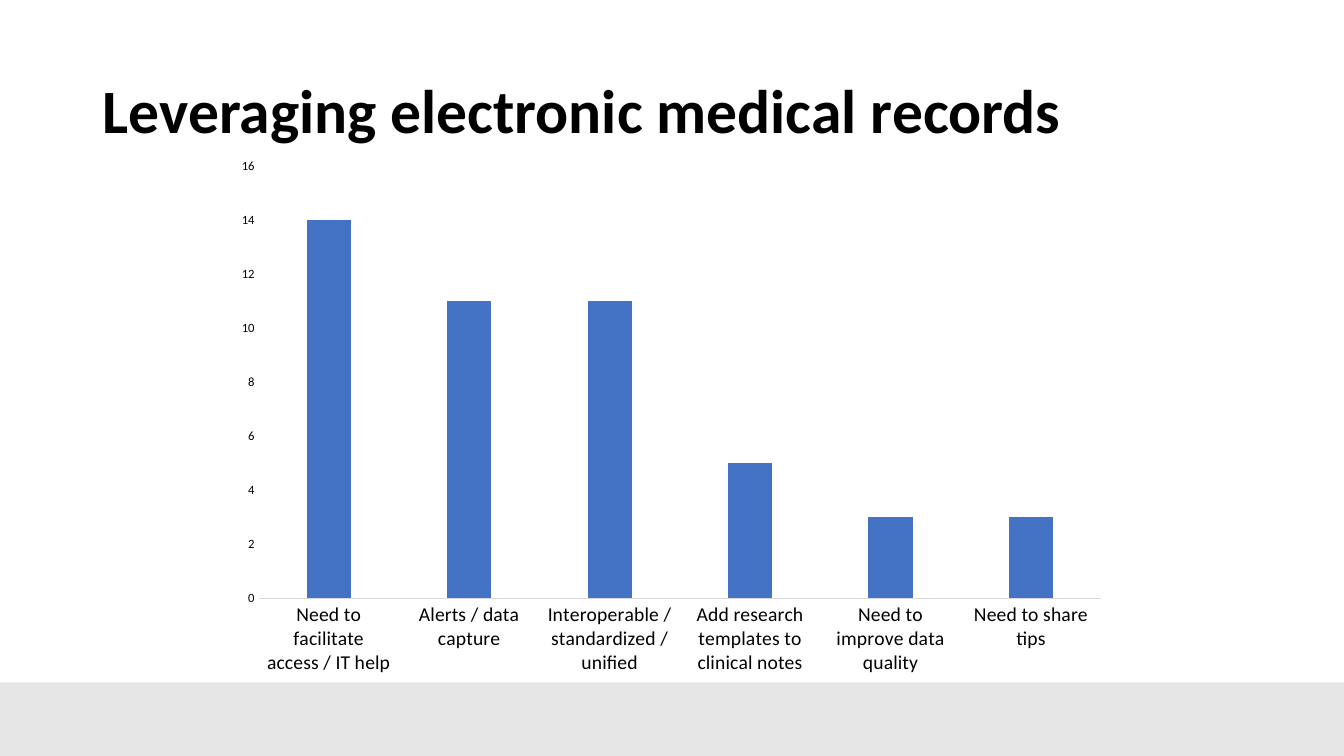
"""Build a slide with a column chart on electronic medical records."""
from pptx import Presentation
from pptx.chart.data import CategoryChartData
from pptx.dml.color import RGBColor
from pptx.enum.chart import XL_CHART_TYPE, XL_TICK_MARK
from pptx.enum.shapes import MSO_SHAPE
from pptx.enum.text import MSO_ANCHOR, PP_ALIGN
from pptx.util import Inches, Pt

COLUMN = XL_CHART_TYPE.COLUMN_CLUSTERED
NONE = XL_TICK_MARK.NONE
RECT = MSO_SHAPE.RECTANGLE
MIDDLE = MSO_ANCHOR.MIDDLE
LEFT = PP_ALIGN.LEFT

TITLE = "Leveraging electronic medical records"
NEEDS = {
    "Need to facilitate access / IT help": 14,
    "Alerts / data capture": 11,
    "Interoperable / standardized / unified": 11,
    "Add research templates to clinical notes": 5,
    "Need to improve data quality": 3,
    "Need to share tips": 3,
}
FONT = "Calibri"
COLORS = {"text": "000000", "band": "E7E6E6", "bar": "4472C4", "line": "D9D9D9"}
WIDTH, HEIGHT = 13.33, 7.5
BAND = 0.73


def color(name):
    return RGBColor.from_string(COLORS[name])


def style(font, size, bold=False):
    font.name, font.size, font.bold = FONT, Pt(size), bold
    font.color.rgb = color("text")


def add_title(slide):
    title = slide.shapes.title
    title.left, title.top = Inches(0.92), Inches(0.4)
    title.width, title.height = Inches(11.5), Inches(1.45)
    frame = title.text_frame
    frame.word_wrap = True
    frame.vertical_anchor = MIDDLE
    para = frame.paragraphs[0]
    para.alignment, para.line_spacing = LEFT, 0.9
    run = para.add_run()
    run.text = TITLE
    style(run.font, 44, True)


def add_band(slide):
    band = slide.shapes.add_shape(
        RECT, 0, Inches(HEIGHT - BAND), Inches(WIDTH), Inches(BAND))
    band.shadow.inherit = False
    band.fill.solid()
    band.fill.fore_color.rgb = color("band")
    band.line.fill.background()


def add_bars(slide):
    data = CategoryChartData()
    data.categories = list(NEEDS)
    data.add_series("Series 1", list(NEEDS.values()))
    chart = slide.shapes.add_chart(
        COLUMN, Inches(2.22), Inches(1.47), Inches(8.88), Inches(5.33), data).chart
    chart.has_legend = chart.has_title = False
    style(chart.font, 10)

    plot = chart.plots[0]
    plot.vary_by_categories = False
    plot.gap_width, plot.overlap = 219, -27
    fill = plot.series[0].format.fill
    fill.solid()
    fill.fore_color.rgb = color("bar")

    for axis, size in ((chart.category_axis, 14), (chart.value_axis, 9)):
        axis.major_tick_mark = axis.minor_tick_mark = NONE
        axis.has_major_gridlines = False
        style(axis.tick_labels.font, size)
    line = chart.category_axis.format.line
    line.color.rgb, line.width = color("line"), Pt(0.75)
    scale = chart.value_axis
    scale.format.line.fill.background()
    scale.minimum_scale, scale.maximum_scale, scale.major_unit = 0, 16, 2


def main():
    deck = Presentation()
    deck.slide_width, deck.slide_height = Inches(WIDTH), Inches(HEIGHT)
    slide = deck.slides.add_slide(deck.slide_layouts[5])
    add_band(slide)
    add_title(slide)
    add_bars(slide)
    deck.save("out.pptx")


if __name__ == "__main__":
    main()
